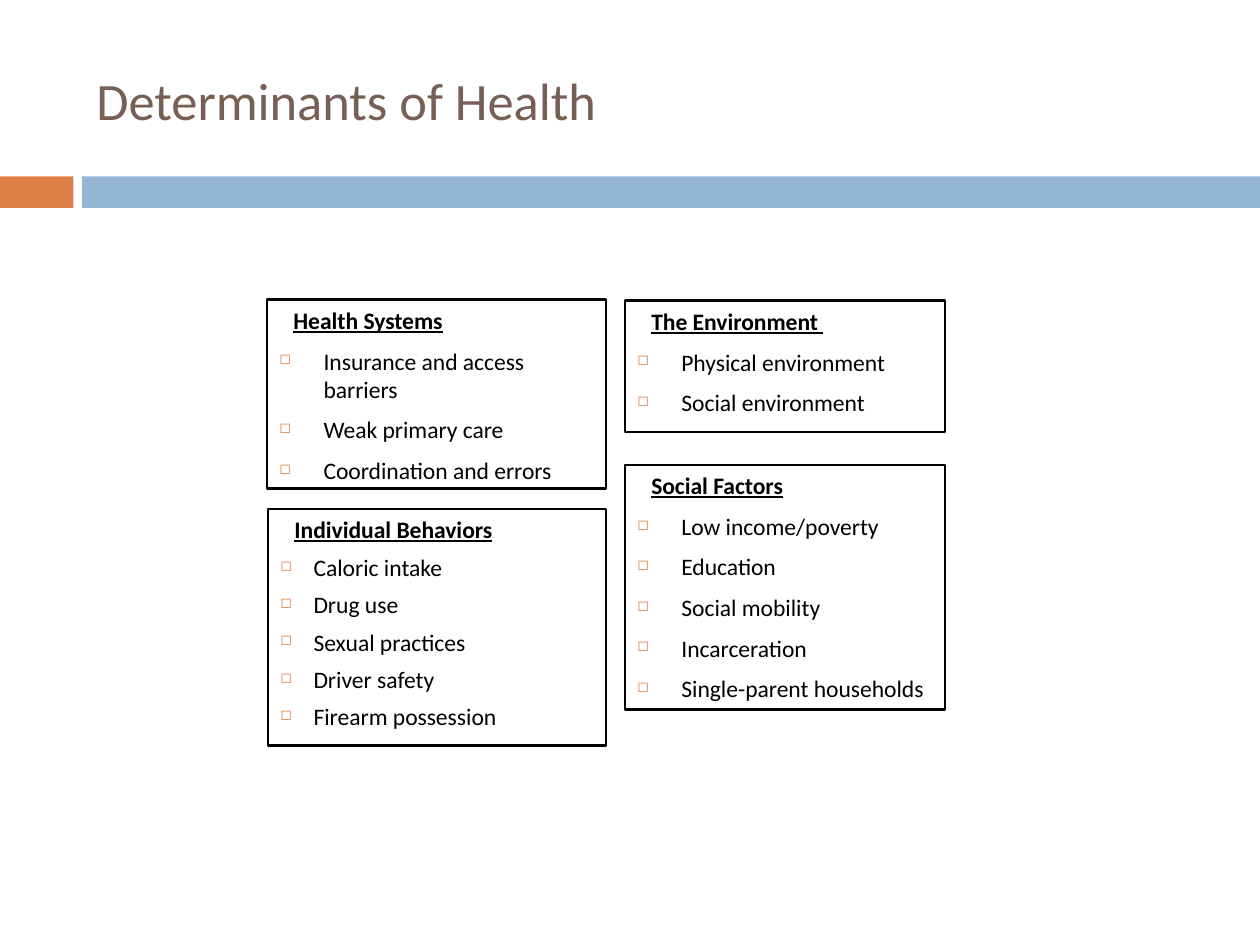
from lxml import etree
from pptx import Presentation
from pptx.dml.color import RGBColor
from pptx.enum import shapes, text
from pptx.oxml import ns
from pptx.util import Pt

HUES = {"title": "775F55", "accent": "DD8047", "band": "94B6D2",
        "ink": "000000", "paper": "FFFFFF"}


def draw(left, top, width, height, fill, line=None):
    """Add a rectangle without a shadow and return it."""
    box = deck.shapes.add_shape(shapes.MSO_SHAPE.RECTANGLE,
                                Pt(left), Pt(top), Pt(width), Pt(height))
    box.shadow.inherit = False
    box.fill.solid()
    box.fill.fore_color.rgb = RGBColor.from_string(HUES[fill])
    if line:
        box.line.color.rgb = RGBColor.from_string(HUES[line])
        box.line.width = Pt(1.5)
    else:
        box.line.fill.background()
    return box


def write(para, words, size=13.5, hue="ink", head=False, left=0, before=0, mark=None):
    """Fill a paragraph; mark is the bullet, hung by the left indent."""
    run = para.add_run()
    run.text = words
    font = run.font
    font.name, font.size = "Calibri", Pt(size)
    font.bold = font.underline = head
    font.color.rgb = RGBColor.from_string(HUES[hue])
    para.alignment = text.PP_ALIGN.LEFT
    para.space_before = Pt(before)
    props = para._p.get_or_add_pPr()
    props.set("marL", str(Pt(left)))
    props.set("indent", str(-Pt(left) if mark else 0))
    if mark:
        tint = etree.SubElement(props, ns.qn("a:buClr"))
        etree.SubElement(tint, ns.qn("a:srgbClr"), val=HUES["accent"])
        etree.SubElement(props, ns.qn("a:buSzPct"), val="60000")
        etree.SubElement(props, ns.qn("a:buChar"), char=mark)


show = Presentation()
show.slide_width, show.slide_height = Pt(720), Pt(540)
deck = show.slides.add_slide(show.slide_layouts[6])

# Band under the title
draw(0, 100.8, 42, 18, "accent")
draw(46.8, 100.8, 673.2, 18, "band")

title = deck.shapes.add_textbox(Pt(48), Pt(18), Pt(690), Pt(78)).text_frame
title.word_wrap = True
title.vertical_anchor = text.MSO_ANCHOR.MIDDLE
write(title.paragraphs[0], "Determinants of Health", size=30, hue="title")

# Place, space before, bullet indent, heading, items
cards = [
    ((153.2, 290.9, 193.2, 135.2), 5.2, 18.9, "Individual Behaviors",
     ["Caloric intake", "Drug use", "Sexual practices", "Driver safety",
      "Firearm possession"]),
    ((357.1, 265.7, 182.9, 139.9), 7, 25.2, "Social Factors",
     ["Low income/poverty", "Education", "Social mobility", "Incarceration",
      "Single-parent households"]),
    ((357.1, 171.8, 182.9, 75), 7, 25.2, "The Environment ",
     ["Physical environment", "Social environment"]),
    ((152.6, 171.2, 193.8, 107.8), 7, 25.2, "Health Systems",
     ["Insurance and access barriers", "Weak primary care",
      "Coordination and errors"]),
]
for place, gap, hang, head, items in cards:
    frame = draw(*place, "paper", "ink").text_frame
    frame.word_wrap = True
    frame.vertical_anchor = text.MSO_ANCHOR.TOP
    write(frame.paragraphs[0], head, head=True, left=8, before=gap)
    for item in items:
        write(frame.add_paragraph(), item, left=hang, before=gap, mark="◻")

show.save("out.pptx")
